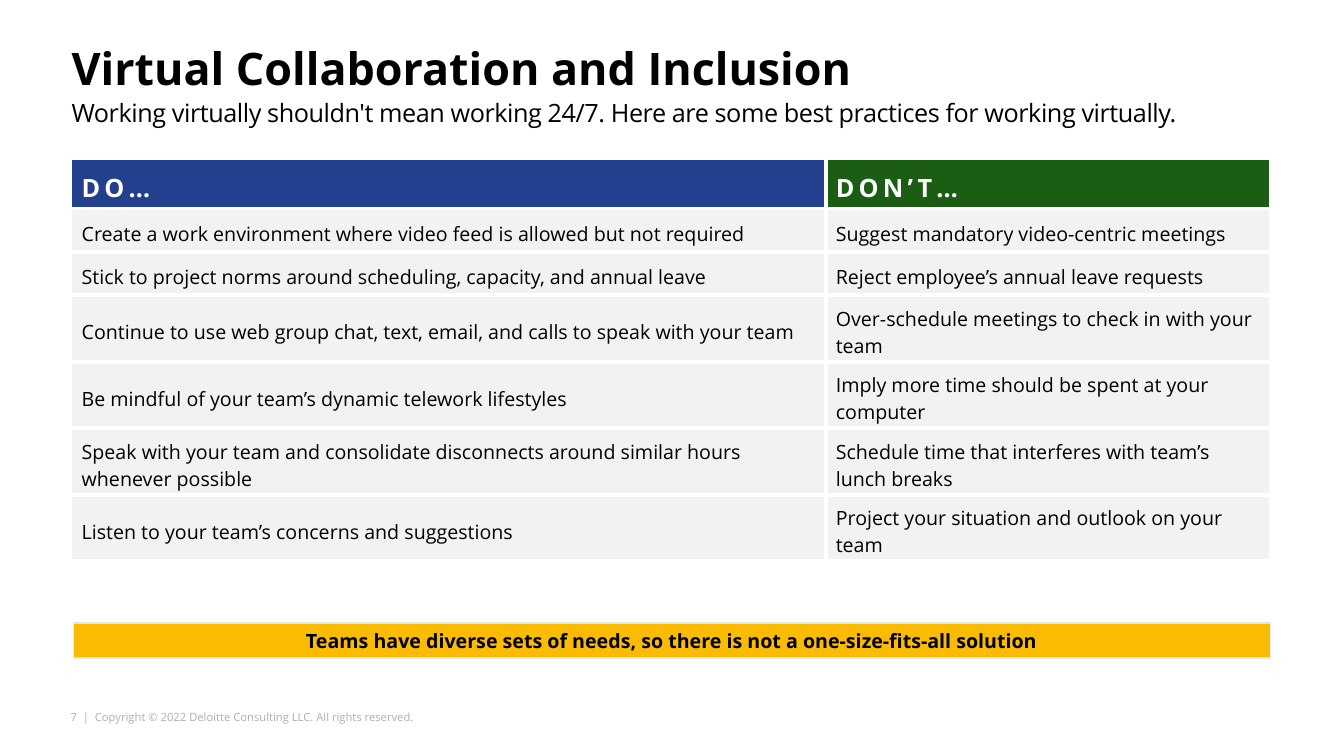
from lxml.etree import SubElement as Sub
from pptx import Presentation
from pptx.dml.color import RGBColor as Rgb
from pptx.enum.shapes import MSO_SHAPE as Shape
from pptx.enum.text import MSO_ANCHOR as Anchor, MSO_AUTO_SIZE as Fit, PP_ALIGN as Align
from pptx.oxml.ns import qn
from pptx.util import Inches, Pt

HUES = {"ink": "000000", "white": "FFFFFF", "blue": "23408E", "green": "1B5D13",
        "row": "F2F2F2", "gold": "FABB01", "edge": "E7E6E6", "note": "AEAEAE"}

HEADS = [("DO…", "blue"), ("DON’T…", "green")]
TIPS = [
    ("Create a work environment where video feed is allowed but not required",
     "Suggest mandatory video-centric meetings"),
    ("Stick to project norms around scheduling, capacity, and annual leave",
     "Reject employee’s annual leave requests"),
    ("Continue to use web group chat, text, email, and calls to speak with your team",
     "Over-schedule meetings to check in with your team"),
    ("Be mindful of your team’s dynamic telework lifestyles",
     "Imply more time should be spent at your computer"),
    ("Speak with your team and consolidate disconnects around similar hours whenever possible",
     "Schedule time that interferes with team’s lunch breaks"),
    ("Listen to your team’s concerns and suggestions",
     "Project your situation and outlook on your team"),
]
WIDTHS = [7.48, 4.41]
HIGHS = [0.49] + [0.43] * 2 + [0.66] * 4


def hue(name):
    return Rgb.from_string(HUES[name])


class Board:
    font = "Open Sans"

    def __init__(self, slide):
        self.slide = slide
        self.shapes = slide.shapes

    def words(self, frame, text, size, color="ink", bold=False, track=0):
        frame.text = text
        para = frame.paragraphs[0]
        for run in para.runs:
            font = run.font
            font.name, font.size, font.bold = self.font, Pt(size), bold
            font.color.rgb = hue(color)
            if track:
                run._r.get_or_add_rPr().set("spc", str(round(track * 100)))
        return para

    def pad(self, frame, gap, anchor, fit=Fit.NONE, wrap=True):
        frame.margin_left = frame.margin_right = Inches(gap)
        frame.margin_top = frame.margin_bottom = Inches(gap)
        frame.vertical_anchor = anchor
        frame.auto_size, frame.word_wrap = fit, wrap

    def place(self, item, box):
        item.left, item.top, item.width, item.height = map(Inches, box)

    def holder(self, index, box, text, size, fit=Fit.NONE, **style):
        item = self.slide.placeholders[index]
        self.place(item, box)
        self.pad(item.text_frame, 0, Anchor.TOP, fit)
        para = self.words(item.text_frame, text, size, **style)
        para.alignment = Align.LEFT
        para.space_before = Pt(0)
        props = para._p.get_or_add_pPr()
        props.set("marL", "0")
        props.set("indent", "0")
        Sub(props, qn("a:buNone"))
        return para

    def label(self, box, text, size, color):
        frame = self.shapes.add_textbox(*map(Inches, box)).text_frame
        self.pad(frame, 0, Anchor.TOP, Fit.SHAPE_TO_FIT_TEXT, False)
        self.words(frame, text, size, color)

    def banner(self, box, text):
        item = self.shapes.add_shape(Shape.RECTANGLE, *map(Inches, box))
        item.shadow.inherit = False
        item.fill.solid()
        item.fill.fore_color.rgb = hue("gold")
        item.line.color.rgb = hue("edge")
        item.line.width = Pt(1)
        self.pad(item.text_frame, 0.13, Anchor.MIDDLE)
        self.words(item.text_frame, text, 14, bold=True).alignment = Align.CENTER

    def cell(self, cell, text, fill, sides, **style):
        cell.margin_left = cell.margin_right = cell.margin_top = Inches(0.1)
        cell.margin_bottom = Inches(0.03)
        cell.vertical_anchor = Anchor.MIDDLE
        self.words(cell.text_frame, text, **style)
        props = cell._tc.get_or_add_tcPr()
        for side in sides:
            line = Sub(props, qn("a:ln" + side), w=str(Pt(3)))
            Sub(Sub(line, qn("a:solidFill")), qn("a:srgbClr"), val=HUES["white"])
        cell.fill.solid()
        cell.fill.fore_color.rgb = hue(fill)

    def table(self, left, top):
        size = map(Inches, (left, top, sum(WIDTHS), sum(HIGHS)))
        grid = self.shapes.add_table(len(HIGHS), len(WIDTHS), *size).table
        grid.horz_banding = False
        for col, wide in zip(grid.columns, WIDTHS):
            col.width = Inches(wide)
        for row, high in zip(grid.rows, HIGHS):
            row.height = Inches(high)
        # Header row
        for c, (text, fill) in enumerate(HEADS):
            self.cell(grid.cell(0, c), text, fill, ["RB", "LRB"][c],
                      size=18, color="white", bold=True, track=3)
        # Advice rows
        for r, pair in enumerate(TIPS, 1):
            for c, text in enumerate(pair):
                self.cell(grid.cell(r, c), text, "row", ["RTB", "LRTB"][c], size=14)


def main():
    deck = Presentation()
    deck.slide_width, deck.slide_height = Inches(13.33), Inches(7.5)
    board = Board(deck.slides.add_slide(deck.slide_layouts[1]))

    # Title and subtitle
    title = board.holder(0, (0.71, 0.46, 11.17, 0.65),
                         "Virtual Collaboration and Inclusion", 32, bold=True)
    title.line_spacing = 0.9
    board.holder(1, (0.71, 0.97, 11.44, 0.3),
                 "Working virtually shouldn't mean working 24/7. "
                 "Here are some best practices for working virtually.",
                 18, Fit.SHAPE_TO_FIT_TEXT, track=-0.3)

    # Do and don't table
    board.table(0.71, 1.58)

    # Closing banner and footer
    board.banner((0.73, 6.18, 11.87, 0.35),
                 "Teams have diverse sets of needs, so there is not a one-size-fits-all solution")
    board.label((0.7, 7.05, 3.49, 0.13),
                "7  |  Copyright © 2022 Deloitte Consulting LLC. All rights reserved.", 8, "note")

    deck.save("out.pptx")


if __name__ == "__main__":
    main()
